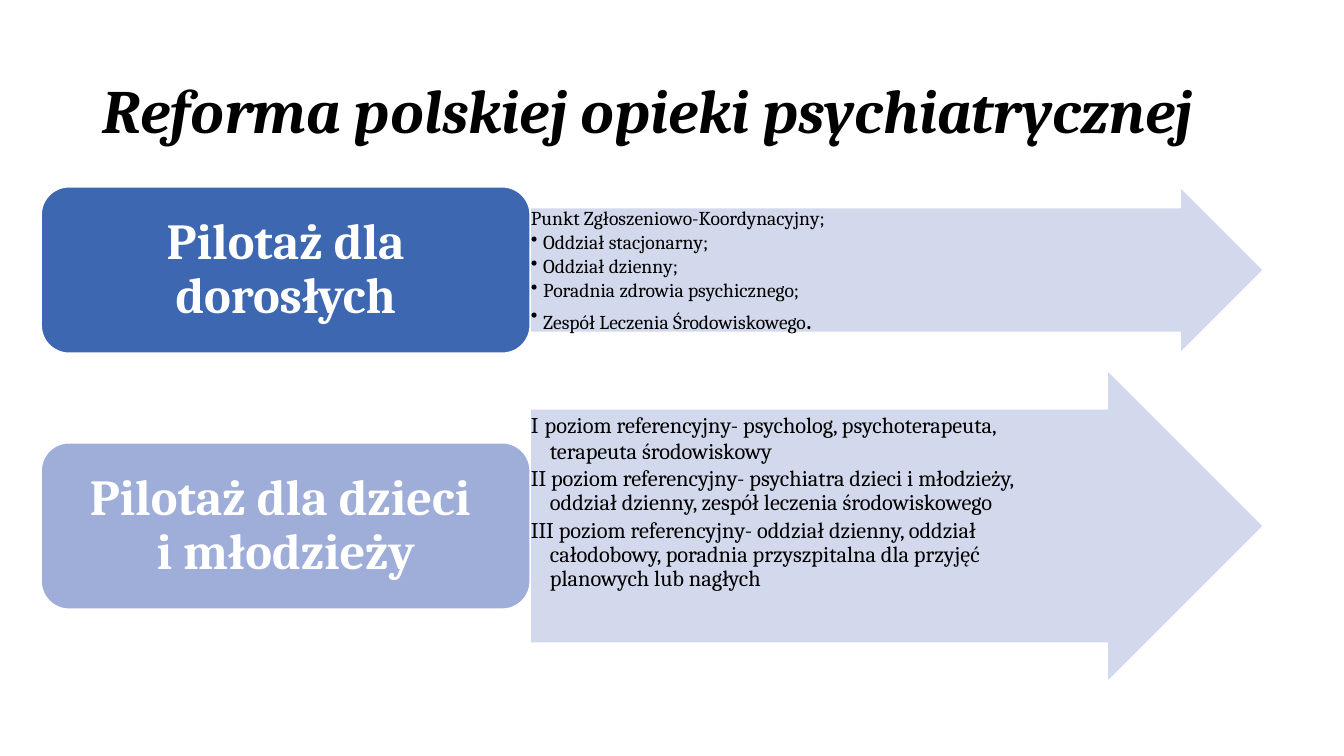
from lxml.etree import SubElement
from pptx import Presentation
from pptx.dml.color import RGBColor
from pptx.enum.shapes import MSO_SHAPE
from pptx.enum.text import MSO_ANCHOR, PP_ALIGN
from pptx.oxml.ns import qn
from pptx.util import Cm, Pt

TITLE = "Reforma polskiej opieki psychiatrycznej"
FONT = "Cambria"
COLORS = {"adult": "3E67B2", "child": "9FAED8", "arrow": "CFD5EA",
          "white": "FFFFFF", "black": "000000"}
ROWS = [
    {"fill": "adult", "label": ["Pilotaż dla dorosłych"],
     "top": 4.71, "height": 4.19, "hang": 0.31, "right": 1.07,
     "items": [
         ("", [("Punkt Zgłoszeniowo-Koordynacyjny;", 14)]),
         ("•", [("Oddział stacjonarny;", 14)]),
         ("•", [("Oddział dzienny;", 14)]),
         ("•", [("Poradnia zdrowia psychicznego;", 14)]),
         ("•", [("Zespół Leczenia Środowiskowego", 14), (".", 20)])]},
    {"fill": "child", "label": ["Pilotaż dla dzieci ", "i młodzieży"],
     "top": 9.32, "height": 7.87, "hang": 0.48, "right": 1.98,
     "items": [
         ("", [("I", 16), (" ", 20),
               ("poziom referencyjny- psycholog, psychoterapeuta, terapeuta środowiskowy", 16)]),
         ("", [("II poziom referencyjny- psychiatra dzieci i młodzieży, oddział dzienny, "
                "zespół leczenia środowiskowego", 16)]),
         ("", [("III poziom referencyjny- oddział dzienny, oddział całodobowy, "
                "poradnia przyszpitalna dla przyjęć planowych lub nagłych", 16)])]},
]
BOX_LEFT, BOX_WIDTH, BOX_HEIGHT = 1.04, 12.32, 4.19
ARROW_LEFT, ARROW_WIDTH = BOX_LEFT + BOX_WIDTH, 18.48


def rgb(name):
    return RGBColor.from_string(COLORS[name])


def add_run(para, text, size, color, bold=False, italic=False):
    run = para.add_run()
    run.text = text
    font = run.font
    font.name, font.size, font.bold, font.italic = FONT, Pt(size), bold, italic
    font.color.rgb = rgb(color)


def add_block(slide, kind, place, fill, insets, anchor):
    shape = slide.shapes.add_shape(kind, *map(Cm, place))
    shape.shadow.inherit = False
    shape.fill.solid()
    shape.fill.fore_color.rgb = rgb(fill)
    shape.line.color.rgb = rgb("white")
    shape.line.width = Pt(1)
    frame = shape.text_frame
    frame.word_wrap = True
    frame.vertical_anchor = anchor
    frame.margin_left, frame.margin_top, frame.margin_right, frame.margin_bottom = map(Cm, insets)
    return shape


def add_arrow(slide, row):
    place = (ARROW_LEFT, row["top"], ARROW_WIDTH, row["height"])
    insets = (0.02, 0.02, row["right"], 0.02)
    arrow = add_block(slide, MSO_SHAPE.RIGHT_ARROW, place, "arrow", insets, MSO_ANCHOR.TOP)
    arrow.adjustments[0], arrow.adjustments[1] = 0.75, 0.5
    tint = arrow.fill._xPr.find(qn("a:solidFill"))[0]
    SubElement(tint, qn("a:alpha"), val="90000")
    frame = arrow.text_frame
    for i, (bullet, runs) in enumerate(row["items"]):
        para = frame.add_paragraph() if i else frame.paragraphs[0]
        para.alignment = PP_ALIGN.LEFT
        para.line_spacing = 0.9
        para.space_after = Pt(runs[0][1] * 0.15)
        props = para._p.get_or_add_pPr()
        props.set("marL", str(Cm(row["hang"])))
        props.set("indent", str(-Cm(row["hang"])))
        if bullet:
            SubElement(props, qn("a:buChar"), char=bullet)
        for text, size in runs:
            add_run(para, text, size, "black")


def add_label(slide, row):
    top = row["top"] + (row["height"] - BOX_HEIGHT) / 2
    place = (BOX_LEFT, top, BOX_WIDTH, BOX_HEIGHT)
    box = add_block(slide, MSO_SHAPE.ROUNDED_RECTANGLE, place, row["fill"],
                    (0.38, 0.19, 0.38, 0.19), MSO_ANCHOR.MIDDLE)
    para = box.text_frame.paragraphs[0]
    para.alignment = PP_ALIGN.CENTER
    para.line_spacing = 0.9
    for i, text in enumerate(row["label"]):
        if i:
            para.add_line_break()
        add_run(para, text, 36, "white", bold=True)


def main():
    deck = Presentation()
    deck.slide_width, deck.slide_height = Cm(33.87), Cm(19.05)
    slide = deck.slides.add_slide(deck.slide_layouts[5])
    title = slide.shapes.title
    title.left, title.top, title.width, title.height = map(Cm, (2.34, 1.02, 29.21, 3.68))
    title.text_frame.vertical_anchor = MSO_ANCHOR.MIDDLE
    para = title.text_frame.paragraphs[0]
    para.alignment = PP_ALIGN.LEFT
    para.line_spacing = 0.9
    add_run(para, TITLE, 44, "black", bold=True, italic=True)
    for row in ROWS:
        add_arrow(slide, row)
        add_label(slide, row)
    deck.save("out.pptx")


if __name__ == "__main__":
    main()
